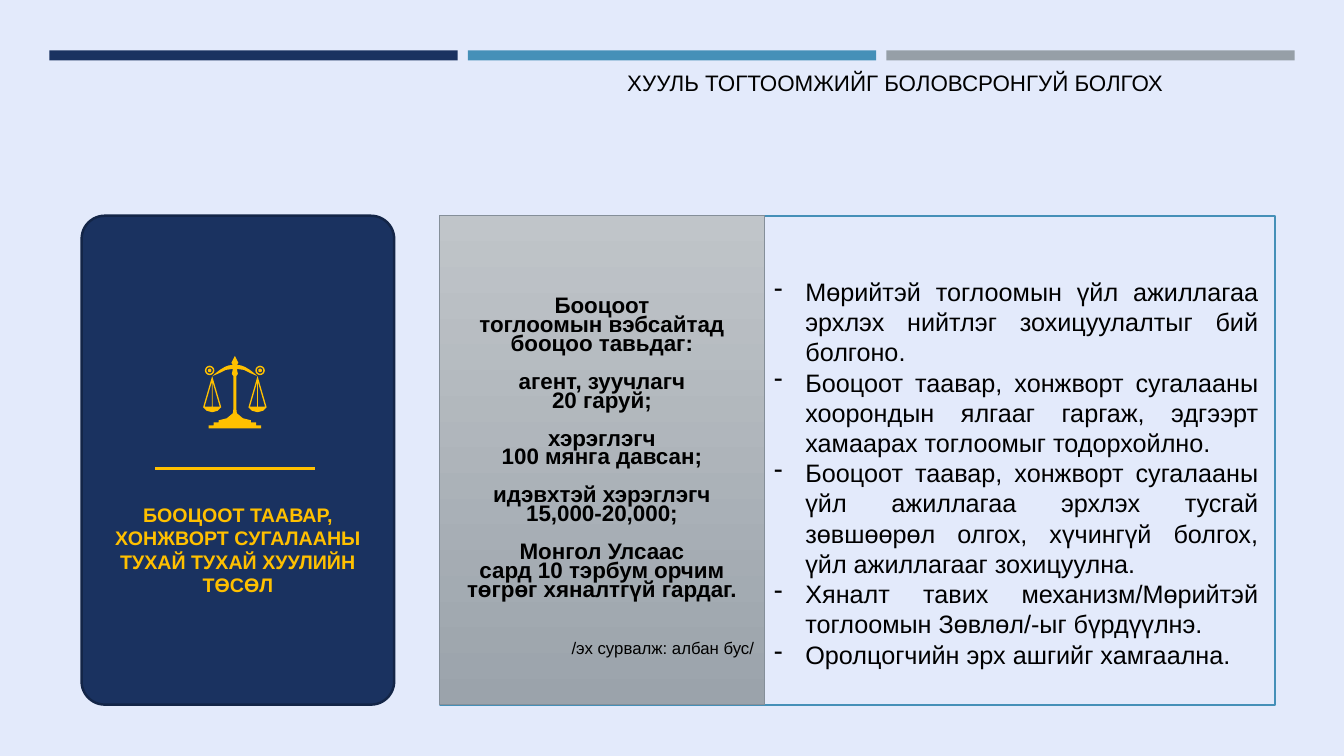
from math import cos, pi, sin
from pptx import Presentation
from pptx.dml.color import RGBColor
from pptx.enum.shapes import MSO_CONNECTOR, MSO_SHAPE
from pptx.enum.text import MSO_ANCHOR, PP_ALIGN
from pptx.oxml.ns import qn
from pptx.util import Inches, Pt
from lxml import etree

RECT, ROUND = MSO_SHAPE.RECTANGLE, MSO_SHAPE.ROUNDED_RECTANGLE
LINE, TOP = MSO_CONNECTOR.STRAIGHT, MSO_ANCHOR.TOP
MID, RIGHT, JUST = PP_ALIGN.CENTER, PP_ALIGN.RIGHT, PP_ALIGN.JUSTIFY

HUES = {
    "back": "E3EAFB", "navy": "1A3260", "edge": "132547", "blue": "4590B8",
    "gray": "969FA7", "gold": "FFC000", "ink": "000000",
    "light": "C0C5C9", "dark": "9BA3AB", "rim": "858F99",
}
TITLE = "ХУУЛЬ ТОГТООМЖИЙГ БОЛОВСРОНГУЙ БОЛГОХ"
DRAFT = "БООЦООТ ТААВАР, ХОНЖВОРТ СУГАЛААНЫ ТУХАЙ ТУХАЙ ХУУЛИЙН ТӨСӨЛ"
FACTS = [
    ["Бооцоот", "тоглоомын вэбсайтад", "бооцоо тавьдаг:"],
    ["агент, зуучлагч", "20 гаруй;"],
    ["хэрэглэгч", "100 мянга давсан;"],
    ["идэвхтэй хэрэглэгч", "15,000-20,000;"],
    ["Монгол Улсаас", "сард 10 тэрбум орчим төгрөг хяналтгүй гардаг."],
]
SOURCE = "/эх сурвалж: албан бус/"
GOALS = [
    "Мөрийтэй тоглоомын үйл ажиллагаа эрхлэх нийтлэг зохицуулалтыг бий болгоно.",
    "Бооцоот таавар, хонжворт сугалааны хоорондын ялгааг гаргаж, эдгээрт хамаарах тоглоомыг тодорхойлно.",
    "Бооцоот таавар, хонжворт сугалааны үйл ажиллагаа эрхлэх тусгай зөвшөөрөл олгох, хүчингүй болгох, үйл ажиллагааг зохицуулна.",
    "Хяналт тавих механизм/Мөрийтэй тоглоомын Зөвлөл/-ыг бүрдүүлнэ.",
    "Оролцогчийн эрх ашгийг хамгаална.",
]
BARS = ["navy", "blue", "gray"]
POST = [
    (0, 0), (3.5, 7), (2, 9), (6, 9.5), (10, 11), (15, 14), (20, 18),
    (22, 20), (15, 17), (9, 14), (2, 13), (3, 18), (1.5, 20), (1.5, 53),
    (2, 57), (8, 62), (16, 64), (16, 66), (21, 66), (21, 69), (26, 69),
    (26, 72), (0, 72),
]
PAN = [(22.5, 20), (31.5, 51), (28, 54.5), (22.5, 56), (17, 54.5), (13.5, 51)]
GAPS = [
    [(22.1, 26), (22.1, 50.5), (15, 50.5)],
    [(22.9, 26), (22.9, 50.5), (30, 50.5)],
]
WIDE, HIGH = 13.33, 7.5
EDGE, BAR, STEP = 0.49, 4.05, 4.15
ROW, TALL = 2.14, 4.85
CARD, SPAN = 0.81, 3.1
PANEL, FACT, FULL = 4.36, 3.22, 8.29
ICON, PEAK = 2.33, 3.53
PITCH = 13.5


def tint(name):
    return RGBColor.from_string(HUES[name])


def block(form, box, fill=None, line=None, size=1):
    shape = slide.shapes.add_shape(form, *map(Inches, box))
    shape.shadow.inherit = False
    if fill:
        shape.fill.solid()
        shape.fill.fore_color.rgb = tint(fill)
    else:
        shape.fill.background()
    if line:
        shape.line.color.rgb = tint(line)
        shape.line.width = Pt(size)
    else:
        shape.line.fill.background()
    return shape


def frame(shape, top=0.05):
    body = shape.text_frame
    body.word_wrap = True
    body.vertical_anchor = TOP
    body.margin_top = Inches(top)
    return body


def write(body, text, size, hue="ink", bold=False, align=MID):
    para = body.paragraphs[0]
    if para.runs:
        para = body.add_paragraph()
    para.alignment = align
    run = para.add_run()
    run.text = text
    run.font.name = "Arial"
    run.font.size = Pt(size)
    run.font.bold = bold
    run.font.color.rgb = tint(hue)
    return para


def dash(para):
    props = para._p.get_or_add_pPr()
    props.set("marL", str(Inches(0.31)))
    props.set("indent", str(-Inches(0.31)))
    etree.SubElement(props, qn("a:buChar")).set("char", "-")


def ring(radius):
    turns = [pi * k / 8 for k in range(16)]
    return [(25 + radius * cos(t), 14.5 + radius * sin(t)) for t in turns]


def scales():
    half = [PAN, *GAPS, ring(4.7), ring(3.2), ring(1.8)]
    flip = [[(-x, y) for x, y in loop] for loop in half]
    stem = POST + [(-x, y) for x, y in reversed(POST)]
    loops = [[(x * 10, y * 10) for x, y in loop] for loop in [stem, *half, *flip]]
    pen = slide.shapes.build_freeform(*loops[0][0], scale=914.4)
    for k, loop in enumerate(loops):
        if k:
            pen.move_to(*loop[0])
        pen.add_line_segments(loop[1:], close=True)
    icon = pen.convert_to_shape(Inches(ICON), Inches(PEAK))
    icon.shadow.inherit = False
    icon.fill.solid()
    icon.fill.fore_color.rgb = tint("gold")
    icon.line.fill.background()


deck = Presentation()
deck.slide_width, deck.slide_height = Inches(WIDE), Inches(HIGH)
slide = deck.slides.add_slide(deck.slide_layouts[6])
slide.background.fill.solid()
slide.background.fill.fore_color.rgb = tint("back")

for k, hue in enumerate(BARS):
    block(RECT, (EDGE + k * STEP, 0.5, BAR, 0.1), hue)

card = block(ROUND, (CARD, ROW, SPAN, TALL), "navy", "edge", 1.75)
card.adjustments[0] = 0.074
write(frame(card, 2.78), DRAFT, 14, "gold", True)
scales()
rule = slide.shapes.add_connector(LINE, *map(Inches, (1.54, 4.65, 3.12, 4.65)))
rule.line.color.rgb = tint("gold")
rule.line.width = Pt(2.25)
etree.SubElement(rule._element.spPr, qn("a:effectLst"))

block(RECT, (PANEL, ROW, FULL, TALL), None, "blue", 1.5)
goals = frame(slide.shapes.add_textbox(*map(Inches, (PANEL + FACT, 2.69, 5, 4.04))))
for text in GOALS:
    dash(write(goals, text, 18, align=JUST))

panel = block(RECT, (PANEL, ROW, FACT, TALL), "light", "rim")
panel.fill.gradient()
panel.fill.gradient_angle = 270
for stop, hue in zip(panel.fill.gradient_stops, ("light", "dark")):
    stop.color.rgb = tint(hue)
facts = frame(panel, 0.83)
for k, group in enumerate(FACTS):
    for j, text in enumerate(group):
        para = write(facts, text, 16, bold=True)
        para.line_spacing = Pt(PITCH)
        if k and not j:
            para.space_before = Pt(PITCH)
note = write(facts, SOURCE, 12, align=RIGHT)
note.line_spacing = Pt(PITCH)
note.space_before = Pt(2 * PITCH)

title = slide.shapes.add_textbox(*map(Inches, (4.43, 0.64, 8.9, 0.37)))
write(frame(title), TITLE, 16)

deck.save("out.pptx")
